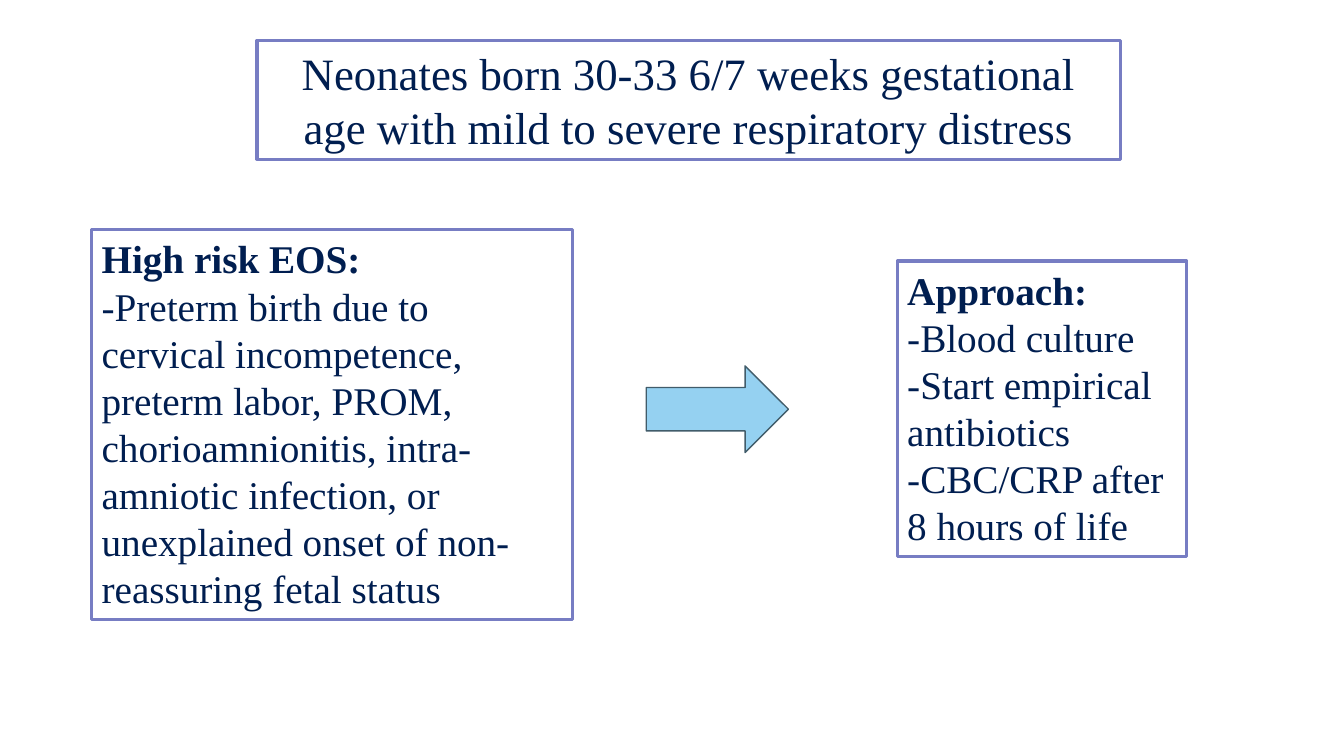
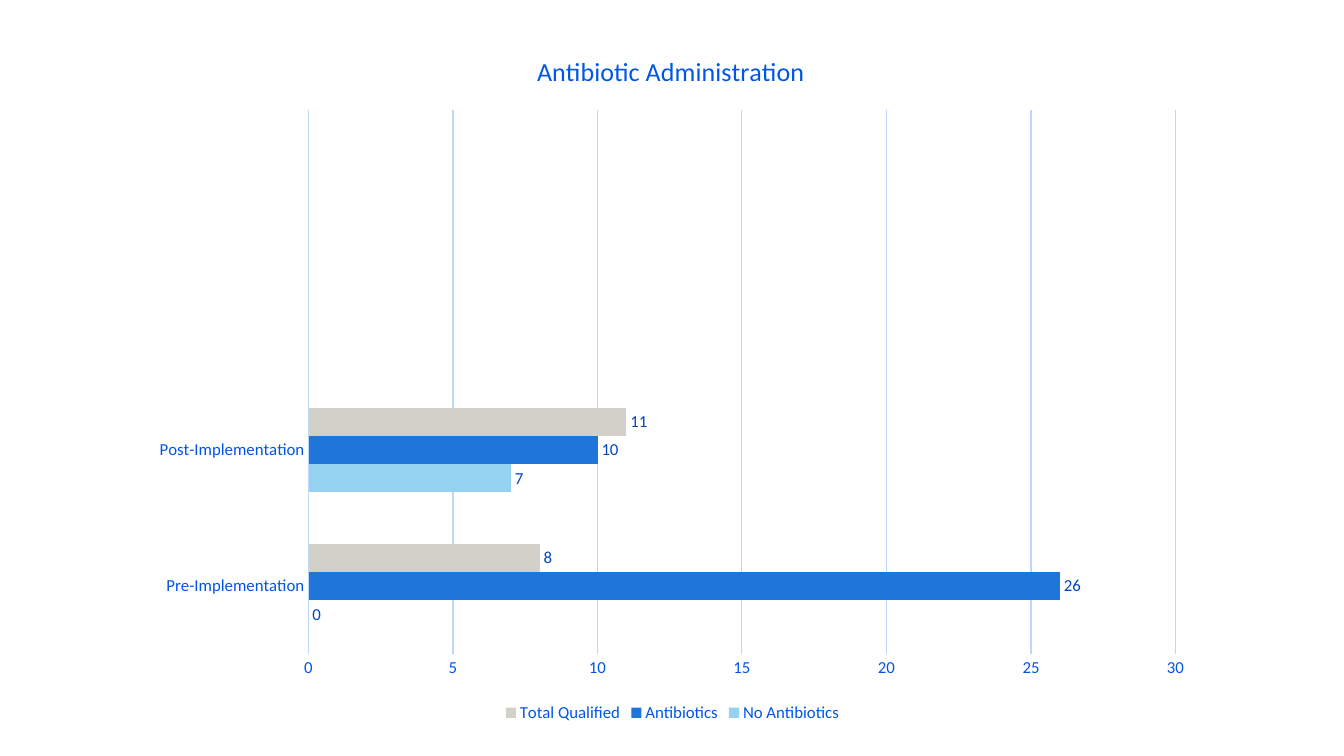
from pptx import Presentation
from pptx.chart.data import CategoryChartData
from pptx.dml.color import RGBColor
from pptx.enum.chart import XL_CHART_TYPE, XL_LABEL_POSITION, XL_LEGEND_POSITION, XL_TICK_MARK
from pptx.enum.shapes import MSO_SHAPE
from pptx.enum.text import MSO_ANCHOR, MSO_AUTO_SIZE, PP_ALIGN
from pptx.oxml import parse_xml
from pptx.oxml.ns import nsdecls, qn
from pptx.util import Inches, Pt

NAVY, BORDER, SKY, ARROW_EDGE = "001E50", "777DC3", "95D1F1", "415C6A"
BLUE, GRID, LABEL = "0056E6", "BED7FF", "0046BC"
BODY_FONT, CHART_FONT = "Times New Roman", "Calibri"

RISKS = [
    "-Preterm birth due to cervical incompetence, preterm labor, PROM, chorioamnionitis, "
    "intra-amniotic infection, or unexplained onset of non-reassuring fetal status",
]
STEPS = ["-Blood culture", "-Start empirical antibiotics", "-CBC/CRP after 8 hours of life"]
CATEGORIES = ["Pre-Implementation", "Post-Implementation", "", ""]
SERIES = [
    ("No Antibiotics", (0, 7, None, None), SKY),
    ("Antibiotics", (26, 10, None, None), "2076D8"),
    ("Total Qualified", (8, 11, None, None), "D3D0CA"),
]


def rgb(value):
    """Turn a hex string into a colour."""
    return RGBColor.from_string(value)


def set_font(font, size, color, name=CHART_FONT, bold=False):
    """Apply size, colour, typeface and weight to a font."""
    font.size, font.name, font.bold = Pt(size), name, bold
    font.color.rgb = rgb(color)


def set_line(line, color, width):
    """Give an outline its colour and width."""
    line.color.rgb = rgb(color)
    line.width = Pt(width)


def write(p, text, size=28, color=NAVY, name=BODY_FONT, bold=False, align=PP_ALIGN.LEFT):
    """Write one formatted run into a paragraph."""
    p.alignment = align
    r = p.add_run()
    r.text = text
    set_font(r.font, size, color, name, bold)


def add_box(s, box, lines, heading=False, anchor=MSO_ANCHOR.TOP, right=0.1, **fmt):
    """Draw an outlined text box, with a bold first line if it has a heading."""
    sp = s.shapes.add_textbox(*map(Inches, box))
    set_line(sp.line, BORDER, 2.25)
    tf = sp.text_frame
    tf.word_wrap = True
    tf.auto_size = MSO_AUTO_SIZE.SHAPE_TO_FIT_TEXT
    tf.vertical_anchor = anchor
    tf.margin_right = Inches(right)
    for i, line in enumerate(lines):
        p = tf.add_paragraph() if i else tf.paragraphs[0]
        write(p, line, bold=heading and i == 0, **fmt)


def add_arrow(s, box):
    """Draw the block arrow from risk to approach."""
    sp = s.shapes.add_shape(MSO_SHAPE.RIGHT_ARROW, *map(Inches, box))
    sp.shadow.inherit = False
    sp.fill.solid()
    sp.fill.fore_color.rgb = rgb(SKY)
    set_line(sp.line, ARROW_EDGE, 1)


def set_layout(element, index, box, inner=False, **inches):
    """Place a chart part, in inches from the corner of the chart box."""
    old = element.find(qn("c:layout"))
    if old is not None:
        element.remove(old)
    full = dict(zip("xywh", box[2:] * 2))
    target = '<c:layoutTarget val="inner"/>' if inner else ""
    modes = "".join(f'<c:{k}Mode val="edge"/>' for k in "xy")
    places = "".join(f'<c:{k} val="{v / full[k]}"/>' for k, v in inches.items())
    element.insert(index, parse_xml(
        f'<c:layout {nsdecls("c")}><c:manualLayout>{target}{modes}{places}'
        "</c:manualLayout></c:layout>"))


def style_axes(chart):
    """Format both axes and the value gridlines."""
    cat, val = chart.category_axis, chart.value_axis
    for axis in (cat, val):
        axis.major_tick_mark = axis.minor_tick_mark = XL_TICK_MARK.NONE
        set_font(axis.tick_labels.font, 12, BLUE)
    set_line(cat.format.line, GRID, 0.75)
    val.format.line.fill.background()
    val.minimum_scale, val.maximum_scale, val.major_unit = 0, 30, 5
    val.has_major_gridlines = True
    set_line(val.major_gridlines.format.line, GRID, 0.75)


def style_bars(plot):
    """Colour the bars and label each with its value."""
    plot.gap_width, plot.overlap, plot.vary_by_categories = 182, 0, False
    for series, (_, _, color) in zip(plot.series, SERIES):
        series.format.fill.solid()
        series.format.fill.fore_color.rgb = rgb(color)
        labels = series.data_labels
        labels.show_value = True
        labels.position = XL_LABEL_POSITION.OUTSIDE_END
        set_font(labels.font, 12, LABEL)


def add_bar_chart(s, box, title):
    """Place the clustered bar chart with its title and legend."""
    data = CategoryChartData()
    data.categories = CATEGORIES
    for name, values, _ in SERIES:
        data.add_series(name, values)
    chart = s.shapes.add_chart(XL_CHART_TYPE.BAR_CLUSTERED, *map(Inches, box), data).chart
    set_font(chart.font, 10, NAVY)
    chart.has_title = True
    write(chart.chart_title.text_frame.paragraphs[0], title, size=18.6, color=BLUE,
          name=CHART_FONT, align=PP_ALIGN.CENTER)
    set_layout(chart.chart_title._element, 1, box, x=3.9, y=0.19)
    set_layout(chart._chartSpace.chart.plotArea, 0, box, inner=True, x=1.68, y=0.8, w=8.6, h=5.4)
    chart.has_legend = True
    chart.legend.position = XL_LEGEND_POSITION.BOTTOM
    chart.legend.include_in_layout = False
    set_font(chart.legend.font, 12, BLUE)
    style_axes(chart)
    style_bars(chart.plots[0])


def approach_slide(s):
    """Build the slide that leads from risk to approach."""
    add_box(s, (0.91, 2.28, 4.77, 3.87), ["High risk EOS:", *RISKS], heading=True, right=0.15)
    add_arrow(s, (6.41, 3.63, 1.41, 0.86))
    add_box(s, (8.9, 2.59, 2.87, 2.93), ["Approach:", *STEPS], heading=True)
    add_box(s, (2.55, 0.4, 8.56, 1.18),
            ["Neonates born 30-33 6/7 weeks gestational age with mild to severe respiratory distress"],
            anchor=MSO_ANCHOR.MIDDLE, size=32, align=PP_ALIGN.CENTER)


def chart_slide(s):
    """Build the slide with the antibiotic chart."""
    add_bar_chart(s, (1.38, 0.29, 10.58, 6.92), "Antibiotic Administration")


def main():
    """Build and save the presentation."""
    prs = Presentation()
    prs.slide_width, prs.slide_height = Inches(13.33), Inches(7.5)
    for build in (approach_slide, chart_slide):
        build(prs.slides.add_slide(prs.slide_layouts[6]))
    prs.save("out.pptx")


if __name__ == "__main__":
    main()
